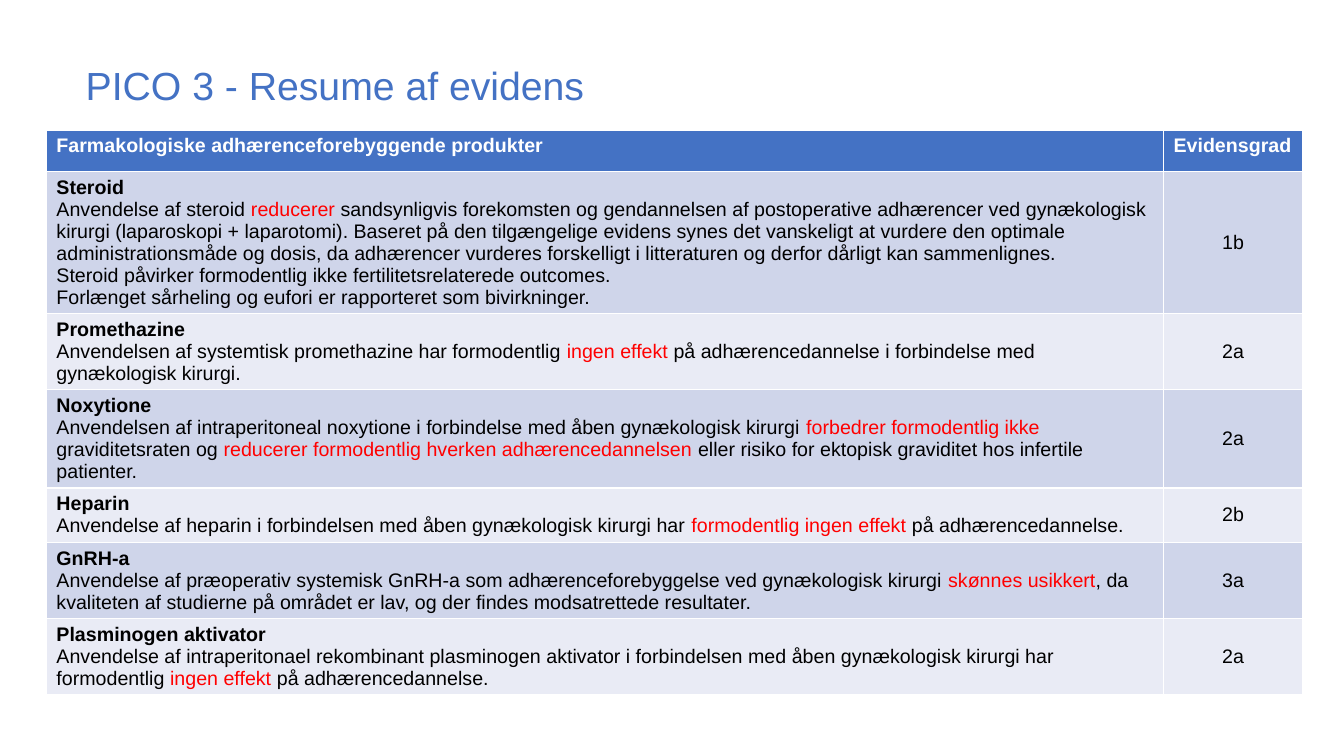
from pptx import Presentation
from pptx.dml.color import RGBColor
from pptx.enum import text
from pptx.util import Inches, Pt

COLORS = {"blue": "4472C4", "white": "FFFFFF", "black": "000000", "red": "FF0000",
          "dark_band": "CFD5EA", "light_band": "E9EBF5"}

HEADINGS = ["Farmakologiske adhærenceforebyggende produkter", "Evidensgrad"]
PRODUCTS = [
    ("Steroid", "1b", [
        "Anvendelse af steroid *reducerer* sandsynligvis forekomsten og gendannelsen af "
        "postoperative adhærencer ved gynækologisk kirurgi (laparoskopi + laparotomi). "
        "Baseret på den tilgængelige evidens synes det vanskeligt at vurdere den optimale "
        "administrationsmåde og dosis, da adhærencer vurderes forskelligt i litteraturen "
        "og derfor dårligt kan sammenlignes.",
        "Steroid påvirker formodentlig ikke fertilitetsrelaterede outcomes.",
        "Forlænget sårheling og eufori er rapporteret som bivirkninger."]),
    ("Promethazine", "2a", [
        "Anvendelsen af systemtisk promethazine har formodentlig *ingen effekt *på "
        "adhærencedannelse i forbindelse med gynækologisk kirurgi."]),
    ("Noxytione", "2a", [
        "Anvendelsen af intraperitoneal noxytione i forbindelse med åben gynækologisk "
        "kirurgi *forbedrer formodentlig ikke *graviditetsraten og *reducerer formodentlig "
        "hverken adhærencedannelsen *eller risiko for ektopisk graviditet hos infertile "
        "patienter."]),
    ("Heparin", "2b", [
        "Anvendelse af heparin i forbindelsen med åben gynækologisk kirurgi har "
        "*formodentlig ingen effekt *på adhærencedannelse."]),
    ("GnRH-a", "3a", [
        "Anvendelse af præoperativ systemisk GnRH-a som adhærenceforebyggelse ved "
        "gynækologisk kirurgi *skønnes usikkert*, da kvaliteten af studierne på området "
        "er lav, og der findes modsatrettede resultater."]),
    ("Plasminogen aktivator", "2a", [
        "Anvendelse af intraperitonael rekombinant plasminogen aktivator i forbindelsen "
        "med åben gynækologisk kirurgi har formodentlig *ingen effekt *på "
        "adhærencedannelse."]),
]


def write(paragraph, content, size=14, color="black", bold=False, align=text.PP_ALIGN.LEFT):
    paragraph.alignment = align
    for index, part in enumerate(content.split("*")):
        run = paragraph.add_run()
        run.text = part
        run.font.name = "Arial"
        run.font.size = Pt(size)
        run.font.bold = bold
        run.font.color.rgb = RGBColor.from_string(COLORS["red" if index % 2 else color])


def paint(cell, color):
    cell.fill.solid()
    cell.fill.fore_color.rgb = RGBColor.from_string(COLORS[color])


prs = Presentation()
prs.slide_width, prs.slide_height = Inches(13.33), Inches(7.5)
slide = prs.slides.add_slide(prs.slide_layouts[5])

title = slide.shapes.title
title.left, title.top = Inches(0.75), Inches(0.15)
title.width, title.height = Inches(11.5), Inches(1.45)
title.text_frame.vertical_anchor = text.MSO_ANCHOR.MIDDLE
heading = title.text_frame.paragraphs[0]
heading.line_spacing = 0.9
write(heading, "PICO 3 - Resume af evidens", size=28, color="blue")

row_height = Inches(0.41)
row_count = len(PRODUCTS) + 1
evidence = slide.shapes.add_table(row_count, 2, Inches(0.46), Inches(1.29),
                                  Inches(12.46), row_height * row_count).table
for column, width in zip(evidence.columns, (11.08, 1.38)):
    column.width = Inches(width)
for row in evidence.rows:
    row.height = row_height

for column, label in enumerate(HEADINGS):
    header = evidence.cell(0, column)
    paint(header, "blue")
    write(header.text_frame.paragraphs[0], label, color="white", bold=True)

for row, (product, level, findings) in enumerate(PRODUCTS, start=1):
    summary, grade = evidence.cell(row, 0), evidence.cell(row, 1)
    for cell in (summary, grade):
        paint(cell, "dark_band" if row % 2 else "light_band")
    write(summary.text_frame.paragraphs[0], product, bold=True)
    for finding in findings:
        write(summary.text_frame.add_paragraph(), finding)
    grade.vertical_anchor = text.MSO_ANCHOR.MIDDLE
    write(grade.text_frame.paragraphs[0], level, align=text.PP_ALIGN.CENTER)

prs.save("out.pptx")
